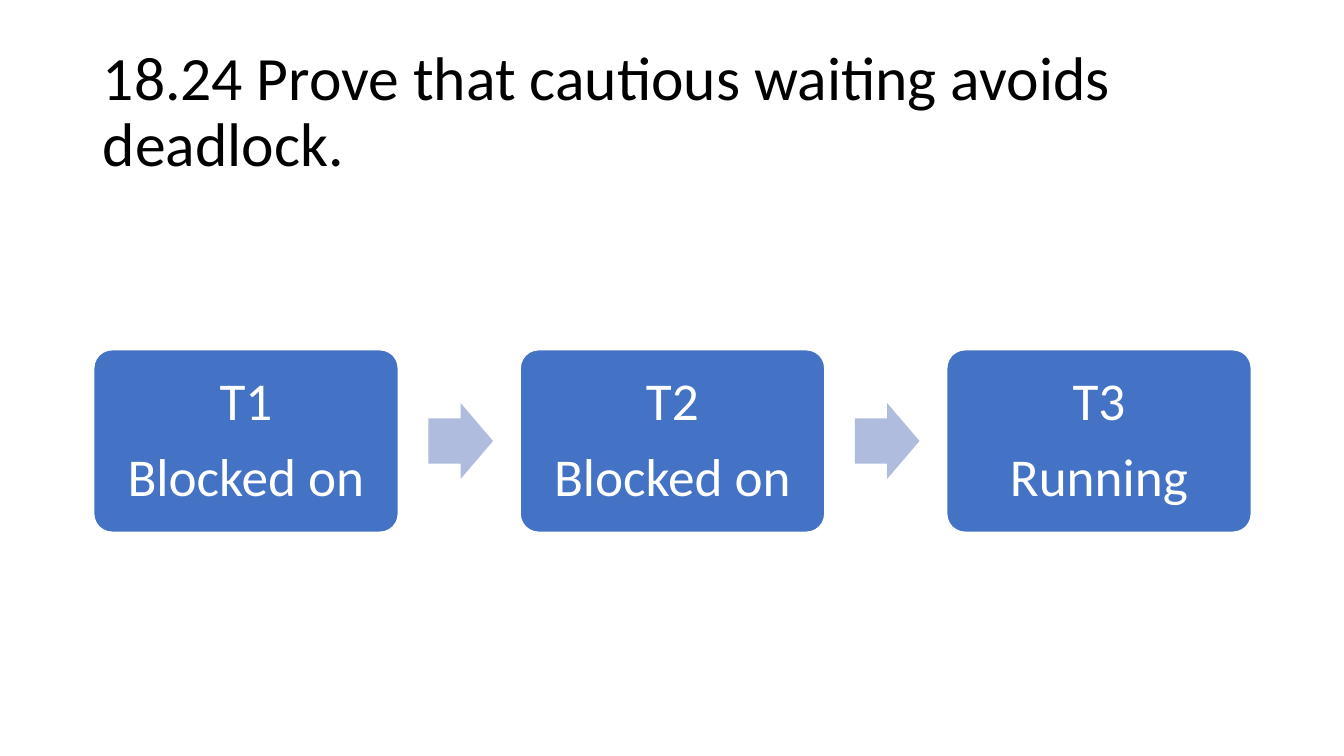
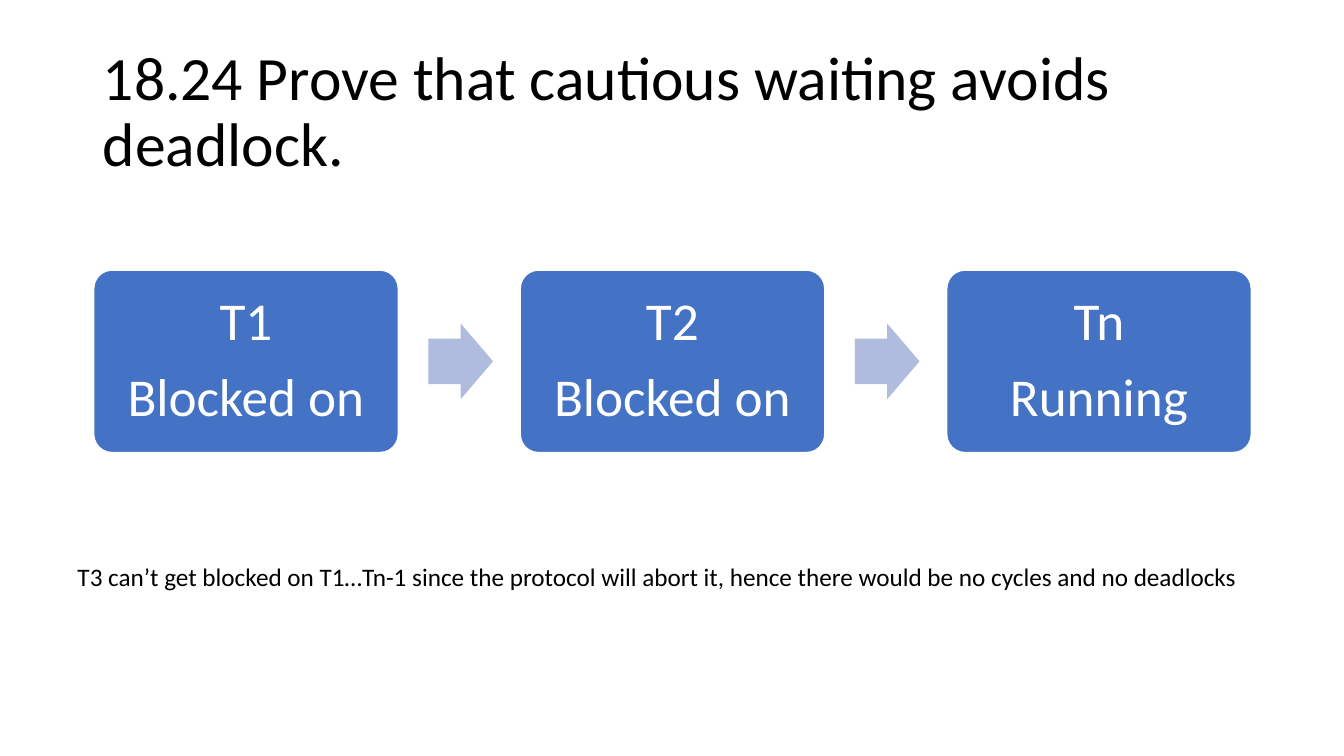
from dataclasses import dataclass

from pptx import Presentation
from pptx.dml.color import RGBColor
from pptx.enum import shapes, text
from pptx.util import Inches, Pt


@dataclass(frozen=True)
class Theme:
    font: str = "Calibri"
    ink: RGBColor = RGBColor(0x00, 0x00, 0x00)
    paper: RGBColor = RGBColor(0xFF, 0xFF, 0xFF)
    box: RGBColor = RGBColor(0x44, 0x72, 0xC4)
    arrow: RGBColor = RGBColor(0xB0, 0xBC, 0xDE)
    title_size: int = 44
    box_size: int = 38
    note_size: int = 18


# Flow geometry, in inches
FLOW_LEFT, FLOW_STEP = 0.93, 4.23
BOX_W, BOX_H = 3.02, 1.81
ARROW_W, ARROW_H, ARROW_GAP = 0.64, 0.75, 0.30

TITLE = "18.24 Prove that cautious waiting avoids deadlock."
NOTE = ("T3 can’t get blocked on T1…Tn-1 since the protocol will abort it, "
        "hence there would be no cycles and no deadlocks")


class Deck:
    """Holds the theme and the current slide."""

    def __init__(self, theme):
        self.theme = theme
        self.prs = Presentation()
        self.prs.slide_width, self.prs.slide_height = Inches(13.33), Inches(7.5)
        self.s = None

    def fill_text(self, tf, lines, size, color, frame=None, para=None):
        """Fill a text frame, one paragraph per line."""
        for name, value in (frame or {}).items():
            setattr(tf, name, value)
        for i, line in enumerate(lines):
            p = tf.add_paragraph() if i else tf.paragraphs[0]
            for name, value in (para or {}).items():
                setattr(p, name, value)
            r = p.add_run()
            r.text = line
            for name, value in {"name": self.theme.font, "size": Pt(size)}.items():
                setattr(r.font, name, value)
            r.font.color.rgb = color

    def slide(self, title):
        """Start a title-only slide."""
        self.s = self.prs.slides.add_slide(self.prs.slide_layouts[5])
        sp = self.s.shapes.title
        place = {"left": 0.92, "top": 0.4, "width": 11.5, "height": 1.45}
        for name, value in place.items():
            setattr(sp, name, Inches(value))
        self.fill_text(sp.text_frame, [title], self.theme.title_size, self.theme.ink,
                       {"vertical_anchor": text.MSO_ANCHOR.MIDDLE, "word_wrap": True,
                        "auto_size": text.MSO_AUTO_SIZE.NONE},
                       {"alignment": text.PP_ALIGN.LEFT, "line_spacing": 0.9})

    def shape(self, kind, left, top, width, height, fill, adjustments):
        """Add a flat preset shape without an outline."""
        sp = self.s.shapes.add_shape(kind, Inches(left), Inches(top),
                                     Inches(width), Inches(height))
        sp.shadow.inherit = False
        sp.fill.solid()
        sp.fill.fore_color.rgb = fill
        sp.line.fill.background()
        for i, value in enumerate(adjustments):
            sp.adjustments[i] = value
        return sp

    def box(self, left, top, lines):
        """Add a rounded transaction box."""
        sp = self.shape(shapes.MSO_SHAPE.ROUNDED_RECTANGLE, left, top,
                        BOX_W, BOX_H, self.theme.box, [0.1])
        sp.line.color.rgb = self.theme.paper
        sp.line.width = Pt(1)
        frame = {f"margin_{side}": Inches(0.16)
                 for side in ("left", "top", "right", "bottom")}
        frame.update(vertical_anchor=text.MSO_ANCHOR.MIDDLE, word_wrap=True)
        self.fill_text(sp.text_frame, lines, self.theme.box_size, self.theme.paper,
                       frame,
                       {"alignment": text.PP_ALIGN.CENTER, "line_spacing": 0.9,
                        "space_after": Pt(13)})

    def flow(self, top, steps):
        """Add a row of boxes with an arrow between neighbours."""
        for i, lines in enumerate(steps):
            left = FLOW_LEFT + i * FLOW_STEP
            self.box(left, top, lines)
            if i < len(steps) - 1:
                self.shape(shapes.MSO_SHAPE.RIGHT_ARROW, left + BOX_W + ARROW_GAP,
                           top + (BOX_H - ARROW_H) / 2, ARROW_W, ARROW_H,
                           self.theme.arrow, [0.6, 0.5])

    def note(self, left, top, width, height, line):
        """Add a one-line remark."""
        sp = self.s.shapes.add_textbox(Inches(left), Inches(top),
                                       Inches(width), Inches(height))
        self.fill_text(sp.text_frame, [line], self.theme.note_size, self.theme.ink,
                       {"word_wrap": False,
                        "auto_size": text.MSO_AUTO_SIZE.SHAPE_TO_FIT_TEXT})


def main():
    deck = Deck(Theme())
    waiting = [("T1", "Blocked on"), ("T2", "Blocked on")]

    # Three transactions
    deck.slide(TITLE)
    deck.flow(3.47, waiting + [("T3", "Running")])

    # General case with the conclusion
    deck.slide(TITLE)
    deck.flow(2.68, waiting + [("Tn", "Running")])
    deck.note(0.67, 5.52, 11.75, 0.4, NOTE)

    deck.prs.save("out.pptx")


if __name__ == "__main__":
    main()
